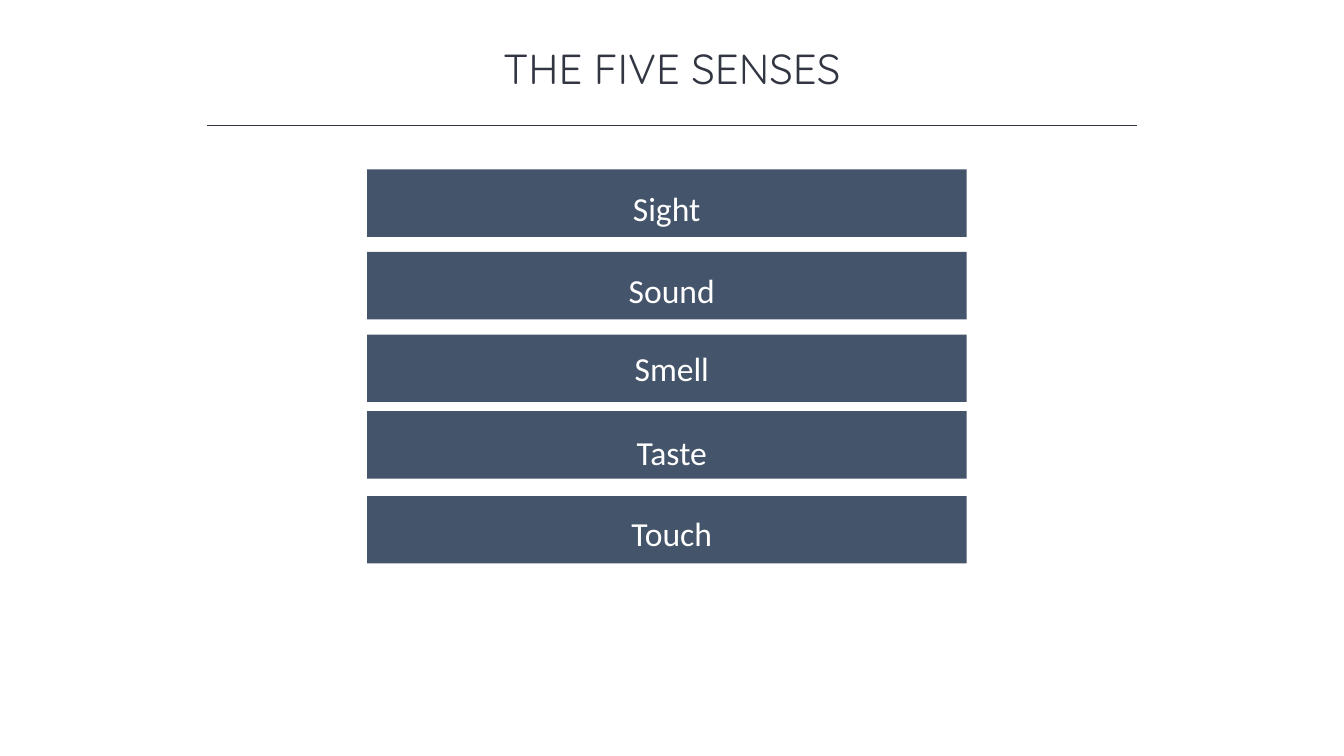
"""Builds a slide that lists the five senses as stacked bars."""
from dataclasses import dataclass

from lxml import etree
from pptx import Presentation
from pptx.dml.color import RGBColor
from pptx.enum import shapes, text
from pptx.oxml import ns
from pptx.util import Cm, Pt

TITLE = "THE FIVE SENSES"
SENSES = [
    ("Sight", 4.27, 9.47, 4.6),
    ("Sound", 6.35, 9.6, 6.68),
    ("Smell", 8.43, 9.6, 8.64),
    ("Taste", 10.36, 9.6, 10.77),
    ("Touch", 12.5, 9.6, 12.8),
]
BAR = (9.25, 15.11, 1.7)
LABEL = (14.66, 1.27)


@dataclass(frozen=True)
class Theme:
    ink: RGBColor = RGBColor.from_string("323542")
    bar: RGBColor = RGBColor.from_string("44546A")
    white: RGBColor = RGBColor.from_string("FFFFFF")
    head: str = "Quicksand"
    body: str = "Calibri"
    big: int = 30
    mid: int = 24


THEME = Theme()


def write(shape, words, face, size, color):
    frame = shape.text_frame
    frame.text = words
    frame.word_wrap = True
    frame.auto_size = text.MSO_AUTO_SIZE.NONE
    frame.vertical_anchor = text.MSO_ANCHOR.TOP
    para = frame.paragraphs[0]
    para.alignment = text.PP_ALIGN.CENTER
    font = para.runs[0].font
    font.name, font.size, font.color.rgb = face, Pt(size), color


def add_rect(group, *box):
    rect = group.shapes.add_shape(shapes.MSO_SHAPE.RECTANGLE, *map(Cm, box))
    rect.shadow.inherit = False
    rect.fill.solid()
    rect.fill.fore_color.rgb = THEME.bar
    rect.line.fill.background()
    return rect


def add_head(slide):
    title = slide.shapes.title
    title.left, title.top, title.width, title.height = map(Cm, (4.23, 0.94, 25.4, 1.55))
    write(title, TITLE, THEME.head, THEME.big, THEME.ink)
    ends = map(Cm, (5.22, 3.16, 28.65, 3.16))
    rule = slide.shapes.add_connector(shapes.MSO_CONNECTOR.STRAIGHT, *ends)
    rule.line.color.rgb = THEME.ink
    rule.line.width = Pt(1)
    etree.SubElement(rule._element.spPr, ns.qn("a:effectLst"))


def add_sense(slide, name, top, left, base):
    group = slide.shapes.add_group_shape()
    x, wide, high = BAR
    add_rect(group, x, top, wide, high)
    label = add_rect(group, left, base, *LABEL)
    write(label, name, THEME.body, THEME.mid, THEME.white)


def main():
    deck = Presentation()
    deck.slide_width, deck.slide_height = Cm(33.87), Cm(19.05)
    slide = deck.slides.add_slide(deck.slide_layouts[5])
    add_head(slide)
    for sense in SENSES:
        add_sense(slide, *sense)
    deck.save("out.pptx")


if __name__ == "__main__":
    main()
